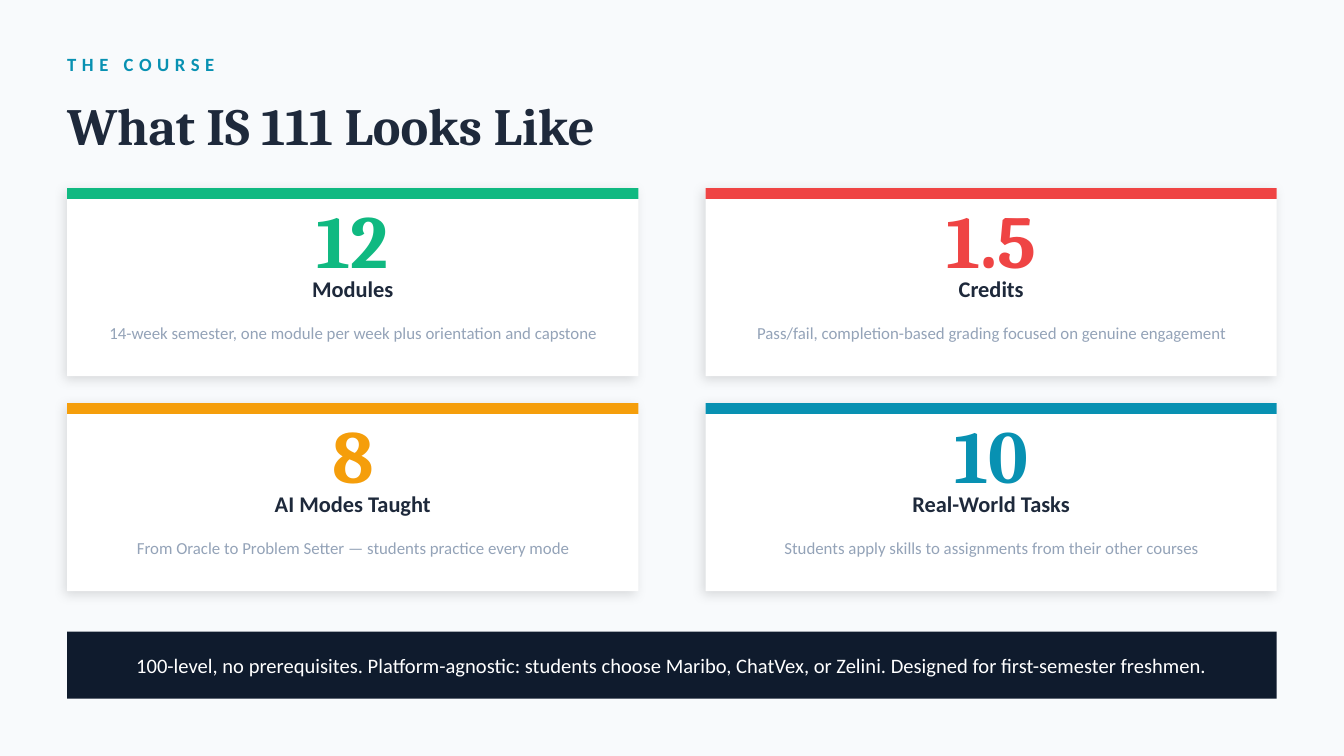
import dataclasses
import itertools
import typing

import lxml.etree
import pptx
import pptx.dml.color
import pptx.enum.shapes
import pptx.enum.text
import pptx.oxml.ns
import pptx.util

# The slide is a grid of square cells, 200 columns wide.
COLUMNS, ROWS = 200, 112.5
CELL = pptx.util.Inches(10) / COLUMNS
MARGIN = 10
CARD_WIDTH, CARD_HEIGHT = 85, 28
CARD_TOP, CARD_ROW_GAP = 28, 4
CARD_COLUMN_GAP = COLUMNS - 2 * MARGIN - 2 * CARD_WIDTH
CARD_PADDING = 4
BAR_HEIGHT = 1.6

INK, MUTED, TEAL, WHITE = "1E293B", "94A3B8", "0891B2", "FFFFFF"
NAVY, BACKGROUND = "0F1B2D", "F8FAFC"
CENTER = pptx.enum.text.PP_ALIGN.CENTER
LEFT = pptx.enum.text.PP_ALIGN.LEFT


class Box(typing.NamedTuple):
    """Left, top, width and height in grid cells."""
    left: float
    top: float
    width: float
    height: float

    def lengths(self) -> list[int]:
        return [round(value * CELL) for value in self]


@dataclasses.dataclass(frozen=True)
class TextStyle:
    size: float
    color: str
    name: str = "Calibri"
    bold: bool = False
    alignment: int = CENTER
    spacing: float = 0


@dataclasses.dataclass(frozen=True)
class Card:
    figure: str
    label: str
    detail: str
    color: str


CARDS = [
    Card("12", "Modules", "14-week semester, one module per week plus orientation and capstone", "10B981"),
    Card("1.5", "Credits", "Pass/fail, completion-based grading focused on genuine engagement", "EF4444"),
    Card("8", "AI Modes Taught", "From Oracle to Problem Setter — students practice every mode", "F59E0B"),
    Card("10", "Real-World Tasks", "Students apply skills to assignments from their other courses", TEAL),
]


def rgb(color: str) -> pptx.dml.color.RGBColor:
    return pptx.dml.color.RGBColor.from_string(color)


def set_attributes(target, values: dict) -> None:
    for name, value in values.items():
        setattr(target, name, value)


def write_text(shape, text: str, style: TextStyle) -> None:
    frame = shape.text_frame
    set_attributes(frame, {
        "word_wrap": True,
        "auto_size": pptx.enum.text.MSO_AUTO_SIZE.NONE,
        "vertical_anchor": pptx.enum.text.MSO_ANCHOR.MIDDLE,
        "margin_left": 0, "margin_top": 0, "margin_right": 0, "margin_bottom": 0,
    })
    paragraph = frame.paragraphs[0]
    paragraph.alignment = style.alignment
    run = paragraph.add_run()
    run.text = text
    set_attributes(run.font, {
        "size": pptx.util.Pt(style.size), "name": style.name, "bold": style.bold,
    })
    run.font.color.rgb = rgb(style.color)
    if style.spacing:
        run._r.get_or_add_rPr().set("spc", str(round(style.spacing * 100)))


def add_text(slide, box: Box, text: str, style: TextStyle) -> None:
    write_text(slide.shapes.add_textbox(*box.lengths()), text, style)


def add_rectangle(slide, box: Box, color: str):
    shape = slide.shapes.add_shape(pptx.enum.shapes.MSO_SHAPE.RECTANGLE, *box.lengths())
    shape.shadow.inherit = False
    shape.fill.solid()
    shape.fill.fore_color.rgb = rgb(color)
    shape.line.fill.background()
    return shape


def add_soft_shadow(shape) -> None:
    qualified = pptx.oxml.ns.qn
    effects = shape._element.spPr.find(qualified("a:effectLst"))
    shadow = lxml.etree.SubElement(
        effects, qualified("a:outerShdw"), blurRad=str(pptx.util.Pt(6)),
        dist=str(pptx.util.Pt(2)), dir=str(135 * 60000), algn="bl", rotWithShape="0")
    color = lxml.etree.SubElement(shadow, qualified("a:srgbClr"), val="000000")
    lxml.etree.SubElement(color, qualified("a:alpha"), val="12000")


def add_card(slide, card: Card, row: int, column: int) -> None:
    left = MARGIN + column * (CARD_WIDTH + CARD_COLUMN_GAP)
    top = CARD_TOP + row * (CARD_HEIGHT + CARD_ROW_GAP)
    add_soft_shadow(add_rectangle(slide, Box(left, top, CARD_WIDTH, CARD_HEIGHT), WHITE))
    add_rectangle(slide, Box(left, top, CARD_WIDTH, BAR_HEIGHT), card.color)
    lines = [
        (3, 9, card.figure, TextStyle(40, card.color, "Cambria", True)),
        (12.4, 5, card.label, TextStyle(12, INK, bold=True)),
        (17.6, 8, card.detail, TextStyle(9, MUTED)),
    ]
    for offset, height, text, style in lines:
        box = Box(left + CARD_PADDING, top + offset, CARD_WIDTH - 2 * CARD_PADDING, height)
        add_text(slide, box, text, style)


def main() -> None:
    presentation = pptx.Presentation()
    set_attributes(presentation, {
        "slide_width": round(COLUMNS * CELL), "slide_height": round(ROWS * CELL),
    })
    slide = presentation.slides.add_slide(presentation.slide_layouts.get_by_name("Title Only"))
    slide.background.fill.solid()
    slide.background.fill.fore_color.rgb = rgb(BACKGROUND)

    add_text(slide, Box(MARGIN, 6, 60, 7), "THE COURSE",
             TextStyle(10, TEAL, bold=True, alignment=LEFT, spacing=3))
    title = slide.shapes.title
    title_box = Box(MARGIN, 13, COLUMNS - 2 * MARGIN, 11)
    set_attributes(title, dict(zip(Box._fields, title_box.lengths())))
    write_text(title, "What IS 111 Looks Like",
               TextStyle(28, INK, "Cambria", True, LEFT))

    for card, (row, column) in zip(CARDS, itertools.product(range(2), repeat=2)):
        add_card(slide, card, row, column)

    banner = Box(MARGIN, 94, COLUMNS - 2 * MARGIN, 10)
    add_rectangle(slide, banner, NAVY)
    add_text(slide, banner._replace(left=MARGIN + CARD_PADDING, width=banner.width - 2 * CARD_PADDING),
             "100-level, no prerequisites. Platform-agnostic: students choose Maribo, "
             "ChatVex, or Zelini. Designed for first-semester freshmen.",
             TextStyle(11, WHITE))
    presentation.save("out.pptx")


if __name__ == "__main__":
    main()
